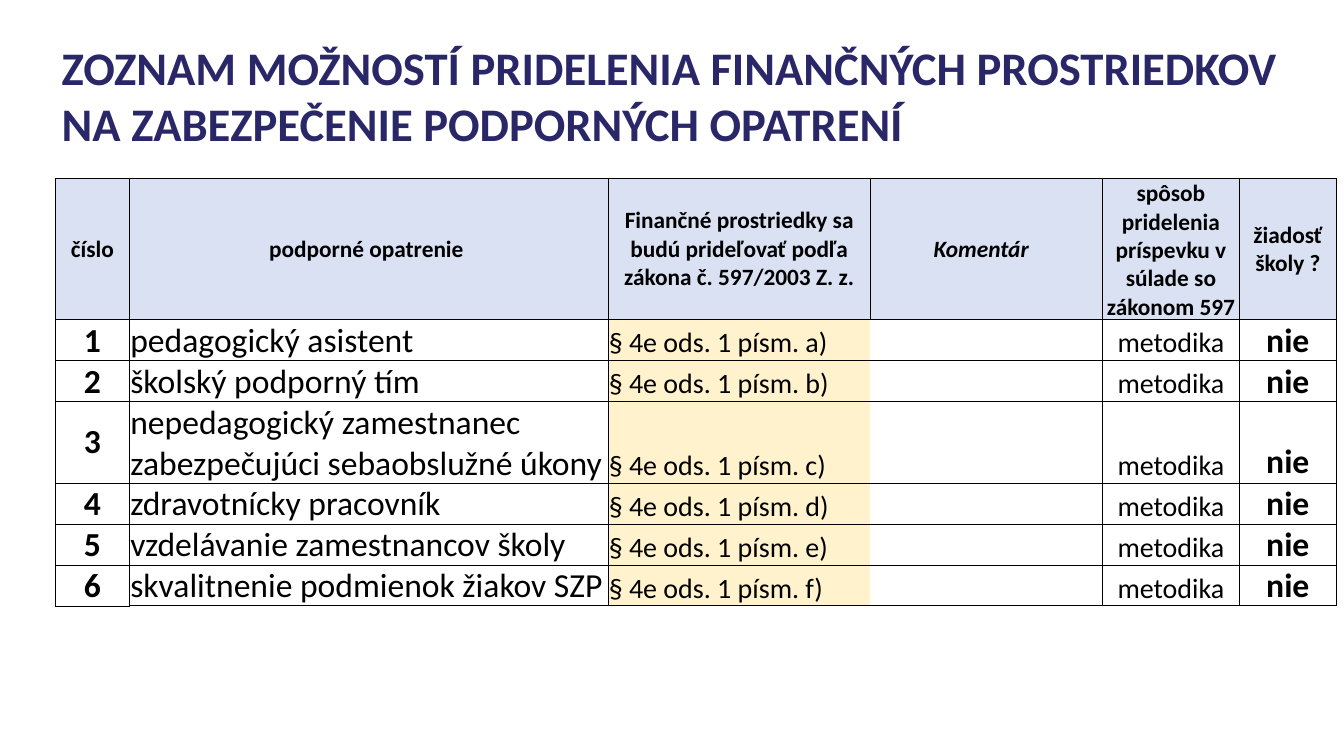
from lxml import etree
from pptx import Presentation
from pptx.dml.color import RGBColor
from pptx.enum.text import MSO_ANCHOR, PP_ALIGN
from pptx.oxml.ns import qn
from pptx.util import Inches, Pt

LEFT, CENTER = PP_ALIGN.LEFT, PP_ALIGN.CENTER
MIDDLE, BOTTOM = MSO_ANCHOR.MIDDLE, MSO_ANCHOR.BOTTOM

FONT = "Calibri"
NAVY, BLACK, PALE_BLUE, CREAM = "2A2768", "000000", "D9E1F2", "FFF2CC"
PLAIN_TABLE_STYLE = "{2D5ABB26-0587-4C30-8999-92F81FD0307C}"

MARGIN = 0.82
TABLE_TOP = 2.66
COLUMN_WIDTHS = [1.11, 7.12, 3.9, 3.46, 2.03, 1.45]
ROW_HEIGHTS = [1.66, 0.45, 0.43, 0.69, 0.45, 0.43, 0.59]
LAW_COLUMN, COMMENT_COLUMN = 2, 3

TITLE = ("ZOZNAM MOŽNOSTÍ PRIDELENIA FINANČNÝCH PROSTRIEDKOV \v"
         "NA ZABEZPEČENIE PODPORNÝCH OPATRENÍ")
HEADERS = [
    "číslo",
    "podporné opatrenie ",
    "Finančné prostriedky sa budú prideľovať podľa zákona č. 597/2003 Z. z.",
    "Komentár  ",
    "spôsob pridelenia príspevku v súlade so zákonom 597",
    "žiadosť školy ?",
]
MEASURES = [
    "pedagogický asistent",
    "školský podporný tím",
    "nepedagogický zamestnanec zabezpečujúci sebaobslužné úkony",
    "zdravotnícky pracovník",
    "vzdelávanie zamestnancov školy",
    "skvalitnenie podmienok žiakov SZP",
]
# Format of each body column
BODY_FORMATS = [
    dict(size=36, bold=True, align=CENTER, anchor=MIDDLE),
    dict(size=36),
    dict(size=30, fill=CREAM),
    dict(),
    dict(size=30, align=CENTER),
    dict(size=36, bold=True, align=CENTER),
]


def color(value):
    return RGBColor.from_string(value)


def write_text(frame, text, size=30, bold=False, italic=False,
               ink=BLACK, align=LEFT):
    frame.word_wrap = True
    para = frame.paragraphs[0]
    para.text = text
    para.alignment = align
    font = para.font
    font.name, font.size = FONT, Pt(size)
    font.bold, font.italic = bold, italic
    font.color.rgb = color(ink)


def add_title(page, text):
    box = page.shapes.add_textbox(Inches(MARGIN), Inches(1.21),
                                  Inches(18.69), Inches(0.39))
    box.text_frame.vertical_anchor = MIDDLE
    write_text(box.text_frame, text, size=50, bold=True, ink=NAVY)


def set_borders(cell, widths):
    """Draw black borders; widths maps L, R, T, B to points, 0 for none."""
    properties = cell._tc.get_or_add_tcPr()
    for side in "LRTB":
        line = etree.SubElement(properties, qn(f"a:ln{side}"),
                                w=str(Pt(widths[side])))
        if widths[side]:
            fill = etree.SubElement(line, qn("a:solidFill"))
            etree.SubElement(fill, qn("a:srgbClr"), val=BLACK)
        else:
            etree.SubElement(line, qn("a:noFill"))


def border_widths(row, column):
    """Thin rules between body rows, full rules elsewhere."""
    last = len(ROW_HEIGHTS) - 1
    return {
        "L": 0 if row and column == COMMENT_COLUMN else 1,
        "R": 0 if row and column == LAW_COLUMN else 1,
        "T": 1 if row < 2 else 0.5,
        "B": 1 if row == 0 or (row == last and column) else 0.5,
    }


def fill_cell(cell, text, borders, fill=None, anchor=BOTTOM, **text_format):
    cell.margin_left = cell.margin_right = cell.margin_top = Inches(0.01)
    cell.margin_bottom = 0
    cell.vertical_anchor = anchor
    set_borders(cell, borders)
    if fill:
        cell.fill.solid()
        cell.fill.fore_color.rgb = color(fill)
    else:
        cell.fill.background()
    if text:
        write_text(cell.text_frame, text, **text_format)


def add_plain_table(page):
    table = page.shapes.add_table(
        len(ROW_HEIGHTS), len(COLUMN_WIDTHS), Inches(MARGIN), Inches(TABLE_TOP),
        Inches(sum(COLUMN_WIDTHS)), Inches(sum(ROW_HEIGHTS))).table
    table.first_row = table.horz_banding = False
    table._tbl.tblPr.find(qn("a:tableStyleId")).text = PLAIN_TABLE_STYLE
    for column, width in zip(table.columns, COLUMN_WIDTHS):
        column.width = Inches(width)
    for row, height in zip(table.rows, ROW_HEIGHTS):
        row.height = Inches(height)
    return table


def add_measures_table(page):
    table = add_plain_table(page)

    # Header row
    for column, text in enumerate(HEADERS):
        fill_cell(table.cell(0, column), text, border_widths(0, column),
                  fill=PALE_BLUE, anchor=MIDDLE, size=25, bold=True,
                  italic=column == COMMENT_COLUMN, align=CENTER)

    # One row per support measure
    for row, (measure, letter) in enumerate(zip(MEASURES, "abcdef"), start=1):
        texts = [str(row), measure, f"§ 4e ods. 1 písm. {letter})",
                 "", "metodika", "nie"]
        for column, (text, style) in enumerate(zip(texts, BODY_FORMATS)):
            fill_cell(table.cell(row, column), text,
                      border_widths(row, column), **style)


def main():
    deck = Presentation()
    deck.slide_width, deck.slide_height = Inches(20), Inches(11.25)
    page = deck.slides.add_slide(deck.slide_layouts[6])
    add_title(page, TITLE)
    add_measures_table(page)
    deck.save("out.pptx")


if __name__ == "__main__":
    main()
